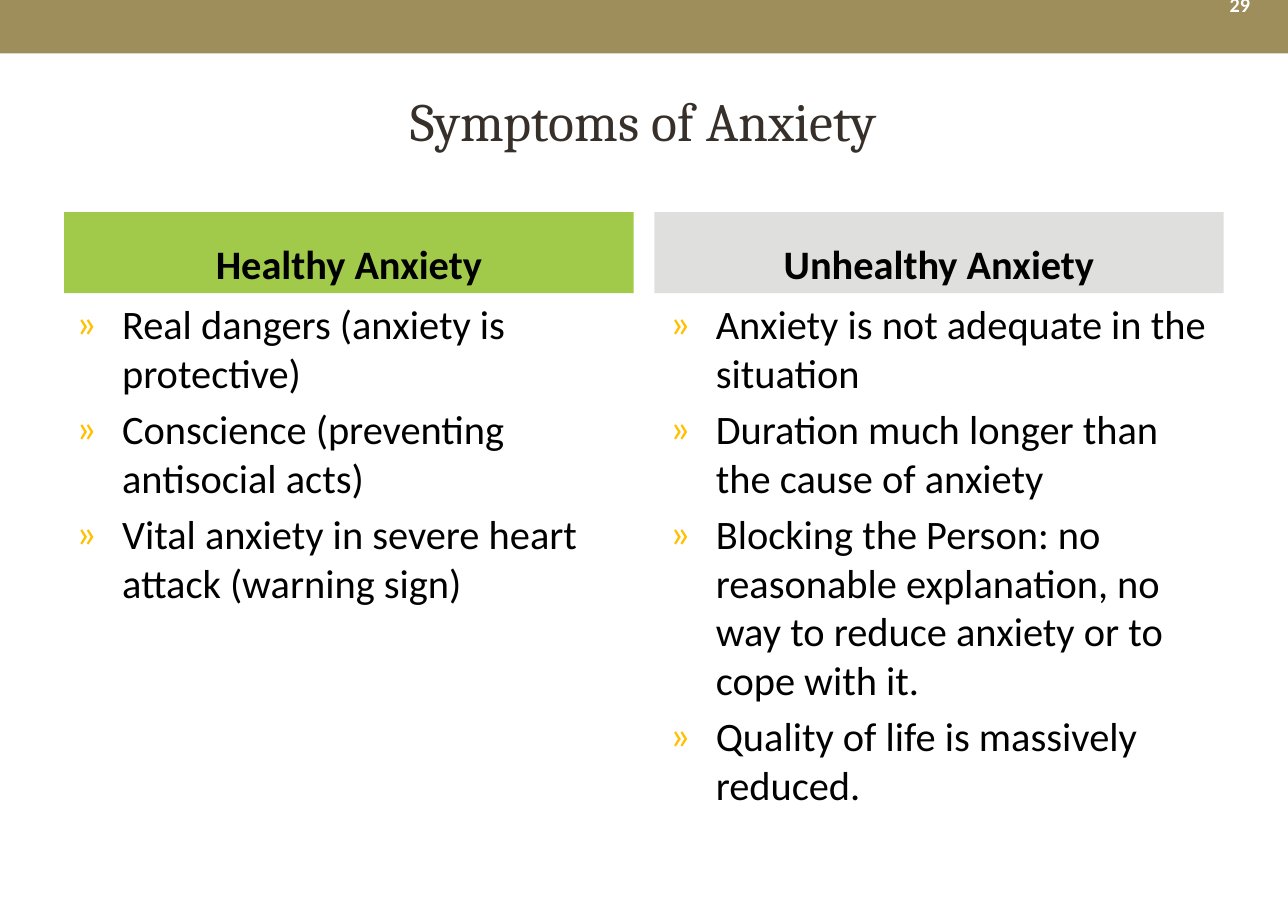
from lxml.etree import SubElement
from pptx import Presentation
from pptx.dml.color import RGBColor
from pptx.enum.shapes import MSO_SHAPE as Shape
from pptx.enum.text import MSO_ANCHOR as Anchor, PP_ALIGN as Align
from pptx.oxml.ns import qn
from pptx.util import Inches, Pt

COLORS = {"band": "9E8E5C", "title": "37302A", "healthy": "A2CA4A", "unhealthy": "DFDFDD",
          "text": "000000", "bullet": "FFC000", "number": "FFFFFF"}
SLIDE_WIDTH, SLIDE_HEIGHT = 10.63, 7.5
HEADING_HEIGHT = 0.67
INDENT = 0.38
HEALTHY = ["Real dangers (anxiety is protective)",
           "Conscience (preventing antisocial acts)",
           "Vital anxiety in severe heart attack (warning sign)"]
UNHEALTHY = ["Anxiety is not adequate in the situation",
             "Duration much longer than the cause of anxiety",
             "Blocking the Person: no reasonable explanation, no way to reduce anxiety "
             "or to cope with it.",
             "Quality of life is massively reduced."]


def color(name):
    """Return the named colour."""
    return RGBColor.from_string(COLORS[name])


def add_bar(slide, box, fill):
    """Add a plain filled rectangle."""
    shape = slide.shapes.add_shape(Shape.RECTANGLE, *map(Inches, box))
    shape.shadow.inherit = False
    shape.fill.solid()
    shape.fill.fore_color.rgb = color(fill)
    shape.line.fill.background()
    return shape


def add_text_box(slide, box):
    """Add an empty text box."""
    return slide.shapes.add_textbox(*map(Inches, box))


def add_bullet(paragraph):
    """Give a paragraph a hanging coloured bullet."""
    properties = paragraph._p.get_or_add_pPr()
    properties.set("marL", str(Inches(INDENT)))
    properties.set("indent", str(-Inches(INDENT)))
    bullet_color = SubElement(properties, qn("a:buClr"))
    SubElement(bullet_color, qn("a:srgbClr"), val=COLORS["bullet"])
    SubElement(properties, qn("a:buFont"), typeface="Calibri")
    SubElement(properties, qn("a:buChar"), char="»")


def write(shape, lines, size=24, font="Calibri", ink="text", bold=False,
          align=Align.LEFT, anchor=Anchor.TOP, bullets=False):
    """Write one paragraph per line into a shape."""
    frame = shape.text_frame
    frame.word_wrap = True
    frame.vertical_anchor = anchor
    for index, line in enumerate(lines):
        paragraph = frame.add_paragraph() if index else frame.paragraphs[0]
        paragraph.alignment = align
        if index:
            paragraph.space_before = Pt(size * 0.2)
        if bullets:
            add_bullet(paragraph)
        paragraph.text = line
        paragraph.font.size = Pt(size)
        paragraph.font.name = font
        paragraph.font.bold = bold
        paragraph.font.color.rgb = color(ink)


def add_header(slide, box):
    """Add the top band with the slide number."""
    left, top, width, height = box
    add_bar(slide, box, "band")
    number_box = add_text_box(slide, (left + width - 0.58, top - 0.11, 0.65, 0.4))
    write(number_box, ["29"], size=12, ink="number", bold=True)


def add_title(slide, box):
    """Add the centred slide title."""
    write(add_text_box(slide, box), ["Symptoms of Anxiety"], size=32, font="Cambria",
          ink="title", align=Align.CENTER, anchor=Anchor.MIDDLE)


def add_column(slide, box, heading, fill, items, list_shift=0):
    """Add a heading bar with its bullet list below."""
    left, top, width, height = box
    bar = add_bar(slide, (left, top, width, HEADING_HEIGHT), fill)
    write(bar, [heading], bold=True, align=Align.CENTER, anchor=Anchor.BOTTOM)
    list_box = (left + list_shift, top + HEADING_HEIGHT, width, height - HEADING_HEIGHT)
    write(add_text_box(slide, list_box), items, bullets=True)


def main():
    """Build and save the presentation."""
    presentation = Presentation()
    presentation.slide_width = Inches(SLIDE_WIDTH)
    presentation.slide_height = Inches(SLIDE_HEIGHT)
    slide = presentation.slides.add_slide(presentation.slide_layouts[6])
    add_header(slide, (0, 0, SLIDE_WIDTH, 0.44))
    add_title(slide, (0.53, 0.36, 9.57, 1.26))
    add_column(slide, (0.53, 1.75, 4.7, 4.95), "Healthy Anxiety", "healthy", HEALTHY)
    add_column(slide, (5.4, 1.75, 4.7, 4.95), "Unhealthy Anxiety", "unhealthy", UNHEALTHY,
               list_shift=0.03)
    presentation.save("out.pptx")


if __name__ == "__main__":
    main()
